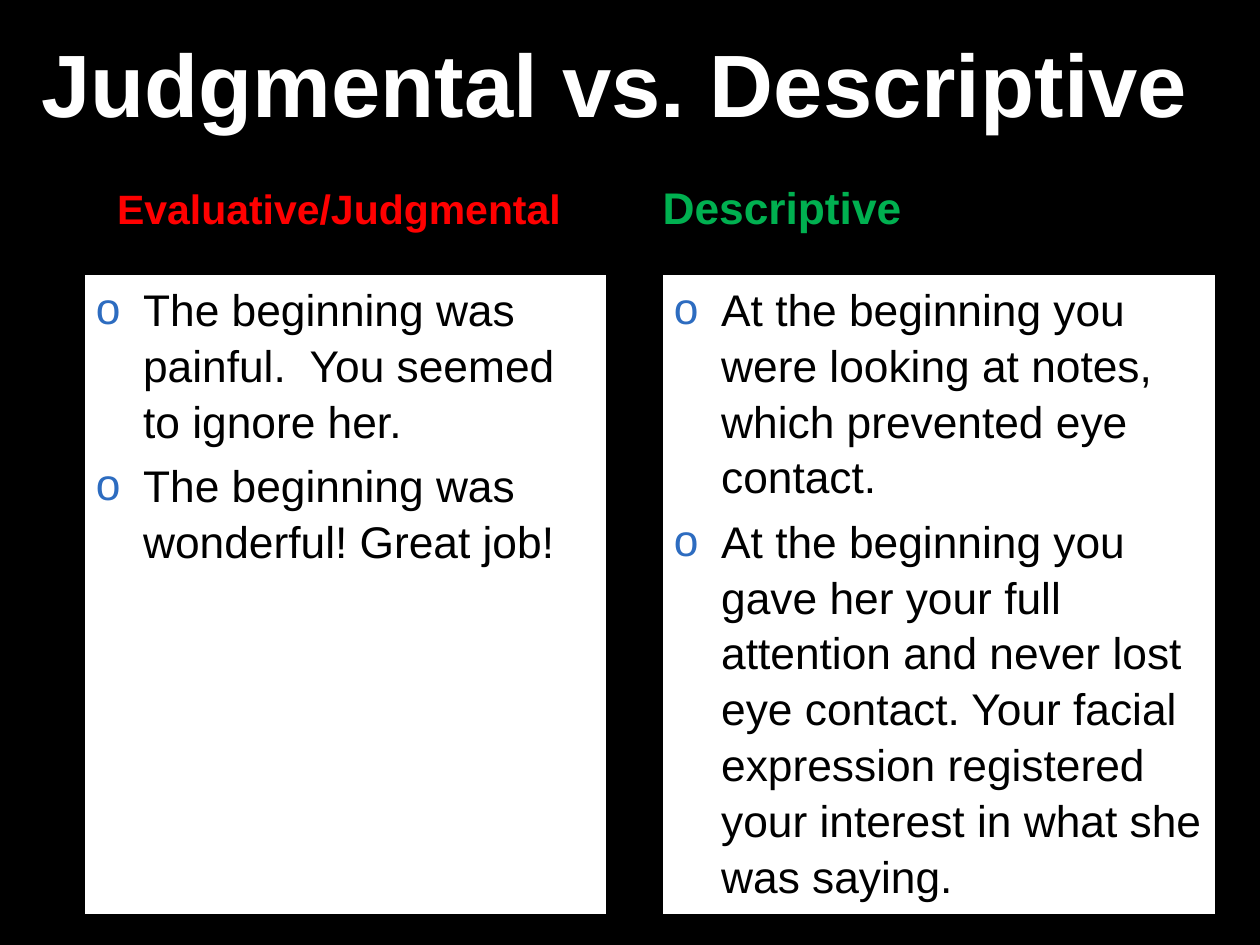
from lxml import etree
from pptx import Presentation
from pptx.dml.color import RGBColor
from pptx.enum.shapes import MSO_SHAPE
from pptx.enum.text import MSO_ANCHOR, PP_ALIGN
from pptx.oxml.ns import qn
from pptx.util import Pt

RECT = MSO_SHAPE.RECTANGLE
TOP, MIDDLE, BOTTOM = MSO_ANCHOR.TOP, MSO_ANCHOR.MIDDLE, MSO_ANCHOR.BOTTOM
LEFT = PP_ALIGN.LEFT


def rgb(value):
    return RGBColor.from_string(value)


def add_text(sp, paragraphs, size, color, anchor, bold=False, bullet=False):
    tf = sp.text_frame
    tf.word_wrap = True
    tf.vertical_anchor = anchor
    for i, text in enumerate(paragraphs):
        p = tf.paragraphs[0] if i == 0 else tf.add_paragraph()
        p.alignment = LEFT
        if i:
            p.space_before = Pt(5)
        if bullet:
            p.line_spacing = 1.05
            pPr = p._p.get_or_add_pPr()
            pPr.set("marL", str(Pt(27)))
            pPr.set("indent", str(-Pt(27)))
            clr = etree.SubElement(pPr, qn("a:buClr"))
            etree.SubElement(clr, qn("a:srgbClr"), val="2D6CC0")
            etree.SubElement(pPr, qn("a:buFont"), typeface="Arial")
            etree.SubElement(pPr, qn("a:buChar"), char="o")
        r = p.add_run()
        r.text = text
        r.font.name = "Arial"
        r.font.size = Pt(size)
        r.font.bold = bold
        r.font.color.rgb = rgb(color)


prs = Presentation()
prs.slide_width, prs.slide_height = Pt(720), Pt(540)
s = prs.slides.add_slide(prs.slide_layouts[6])
s.background.fill.solid()
s.background.fill.fore_color.rgb = rgb("000000")

title = s.shapes.add_textbox(Pt(16.5), Pt(8.6), Pt(702), Pt(76.3))
add_text(title, ["Judgmental vs. Descriptive"], 50.6, "FFFFFF", MIDDLE, bold=True)

columns = [
    ("Evaluative/Judgmental", 23.4, "FF0000", 59.8, 288, 47.7, 299.5, [
        "The beginning was painful.  You seemed to ignore her.",
        "The beginning was wonderful! Great job!",
    ]),
    ("Descriptive", 25.3, "00B050", 371.5, 289.5, 378, 317.5, [
        "At the beginning you were looking at notes, which prevented eye contact.",
        "At the beginning you gave her your full attention and never lost eye contact. "
        "Your facial expression registered your interest in what she was saying.",
    ]),
]

for heading, size, color, head_x, head_w, box_x, box_w, points in columns:
    head = s.shapes.add_textbox(Pt(head_x), Pt(93.6), Pt(head_w), Pt(43.2))
    add_text(head, [heading], size, color, BOTTOM, bold=True)

    box = s.shapes.add_shape(RECT, Pt(box_x), Pt(156.2), Pt(box_w), Pt(367.2))
    box.shadow.inherit = False
    box.fill.solid()
    box.fill.fore_color.rgb = rgb("FFFFFF")
    box.line.color.rgb = rgb("000000")
    box.line.width = Pt(2)
    add_text(box, points, 25.3, "000000", TOP, bullet=True)

prs.save("out.pptx")
